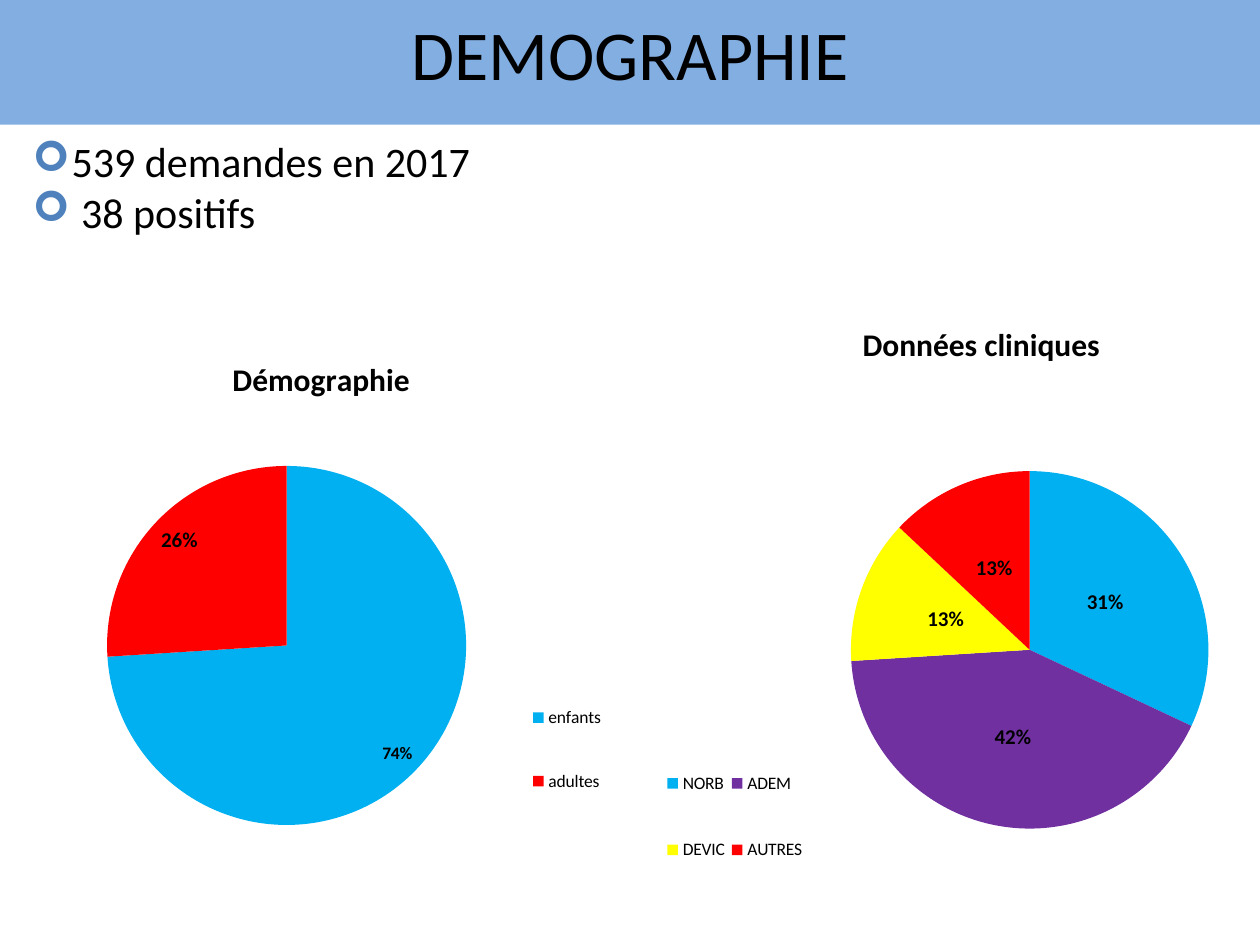
from lxml.etree import SubElement
from pptx import Presentation
from pptx.chart.data import CategoryChartData
from pptx.dml.color import RGBColor
from pptx.enum.chart import XL_CHART_TYPE, XL_LABEL_POSITION as LabelPos, XL_LEGEND_POSITION
from pptx.enum.text import MSO_ANCHOR, PP_ALIGN
from pptx.oxml import parse_xml
from pptx.oxml.ns import nsdecls, qn
from pptx.util import Inches, Pt

FONT = "Calibri"
BLACK = RGBColor(0, 0, 0)
BAND = RGBColor(0x83, 0xAE, 0xE1)
SKY = RGBColor(0x00, 0xB0, 0xF0)
RED = RGBColor(0xFF, 0, 0)
PURPLE = RGBColor(0x70, 0x30, 0xA0)
YELLOW = RGBColor(0xFF, 0xFF, 0)
BULLET_HEX = "4F81BD"

# Content; layouts are shares of the chart's frame
TITLE = "DEMOGRAPHIE"
FACTS = ["539 demandes en 2017", " 38 positifs"]
PIES = [
    dict(title="Démographie", frame=(0, 2.65, 5, 4.85),
         slices=[("enfants", 74, SKY), ("adultes", 26, RED)],
         title_at=(0.36, 0.03), plot_at=(0.17, 0.12, 0.57, 0.78),
         legend_at=(0.81, 0.54, 0.18, 0.28),
         label_size=10, label_pos=LabelPos.INSIDE_END,
         special=dict(point=1, text=None)),
    dict(title="Données cliniques", frame=(5.24, 2.41, 4.73, 5.09),
         slices=[("NORB", 32, SKY), ("ADEM", 42, PURPLE),
                 ("DEVIC", 13, YELLOW), ("AUTRES", 13, RED)],
         title_at=(0.33, 0.02), plot_at=(0.32, 0.08, 0.6, 0.92),
         legend_at=(0, 0.66, 0.25, 0.28),
         label_size=12, label_pos=LabelPos.CENTER,
         special=dict(point=0, text="31%")),
]
SPECIAL_SIZE = 12


def style(font, size, bold=False):
    font.name, font.size, font.bold = FONT, Pt(size), bold
    font.color.rgb = BLACK


def place(part, shares, inner=False):
    """Give a chart part a manual layout: x, y and optionally w, h."""
    for old in part.findall(qn("c:layout")):
        part.remove(old)
    layout = parse_xml(f"<c:layout {nsdecls('c')}><c:manualLayout/></c:layout>")
    manual = layout[0]
    if inner:
        SubElement(manual, qn("c:layoutTarget")).set("val", "inner")
    for axis in "xy":
        SubElement(manual, qn(f"c:{axis}Mode")).set("val", "edge")
    for key, share in zip("xywh", shares):
        SubElement(manual, qn(f"c:{key}")).set("val", str(share))
    overlay = part.find(qn("c:overlay"))
    if overlay is None:
        part.insert(0, layout)
    else:
        overlay.addprevious(layout)


def add_pie(slide, pie):
    names, values, colours = zip(*pie["slices"])
    chart_data = CategoryChartData()
    chart_data.categories = names
    chart_data.add_series("Series 1", values)
    chart = slide.shapes.add_chart(
        XL_CHART_TYPE.PIE, *map(Inches, pie["frame"]), chart_data).chart
    style(chart.font, 10)

    # Title and legend
    chart.has_title = True
    heading = chart.chart_title.text_frame
    heading.text = pie["title"]
    style(heading.paragraphs[0].font, 18, True)
    chart.has_legend = True
    chart.legend.position = XL_LEGEND_POSITION.RIGHT
    chart.legend.include_in_layout = False

    # Slices
    plot = chart.plots[0]
    plot.vary_by_categories = True
    points = plot.series[0].points
    for index, colour in enumerate(colours):
        fill = points[index].format.fill
        fill.solid()
        fill.fore_color.rgb = colour

    # Percentages, one of them formatted on its own
    labels = plot.series[0].data_labels
    labels.show_percentage, labels.show_value = True, False
    labels.number_format, labels.number_format_is_linked = "0%", False
    labels.position = pie["label_pos"]
    style(labels.font, pie["label_size"], True)
    special = pie["special"]
    label = points[special["point"]].data_label
    if special["text"]:
        label.text_frame.text = special["text"]
        style(label.text_frame.paragraphs[0].runs[0].font, SPECIAL_SIZE, True)
    else:
        style(label.font, SPECIAL_SIZE, True)
    label.position = pie["label_pos"]
    root = plot.series[0]._element
    for tag, shown in (("showVal", "0"), ("showPercent", "1")):
        for flag in root.findall(f".//{qn('c:dLbl')}/{qn('c:' + tag)}"):
            flag.set("val", shown)

    place(chart.chart_title._element, pie["title_at"])
    place(chart.legend._element, pie["legend_at"])
    place(chart._chartSpace.chart.plotArea, pie["plot_at"], inner=True)


def main():
    prs = Presentation()
    prs.slide_width, prs.slide_height = Inches(10), Inches(7.5)
    slide = prs.slides.add_slide(prs.slide_layouts[5])

    # Title band
    band = slide.shapes.title
    band.left, band.top, band.width, band.height = 0, 0, prs.slide_width, Inches(0.99)
    band.fill.solid()
    band.fill.fore_color.rgb = BAND
    band.text_frame.text = TITLE
    band.text_frame.vertical_anchor = MSO_ANCHOR.TOP
    band.text_frame.margin_top = Inches(0.08)
    heading = band.text_frame.paragraphs[0]
    heading.alignment = PP_ALIGN.CENTER
    style(heading.font, 40)

    # Key figures
    facts = slide.shapes.add_textbox(*map(Inches, (0.16, 1.03, 9.61, 0.91))).text_frame
    facts.word_wrap = True
    facts.text = "\n".join(FACTS)
    for fact in facts.paragraphs:
        style(fact.font, 24)
        props = fact._p.get_or_add_pPr()
        props.set("marL", str(Inches(0.31)))
        props.set("indent", str(-Inches(0.31)))
        bullet = (f"<a:buClr {nsdecls('a')}><a:srgbClr val='{BULLET_HEX}'/></a:buClr>",
                  f"<a:buFont {nsdecls('a')} typeface='Wingdings'/>",
                  f"<a:buChar {nsdecls('a')} char='➢'/>")
        for position, xml in enumerate(bullet):
            props.insert(position, parse_xml(xml))

    for pie in PIES:
        add_pie(slide, pie)
    prs.save("out.pptx")


if __name__ == "__main__":
    main()
